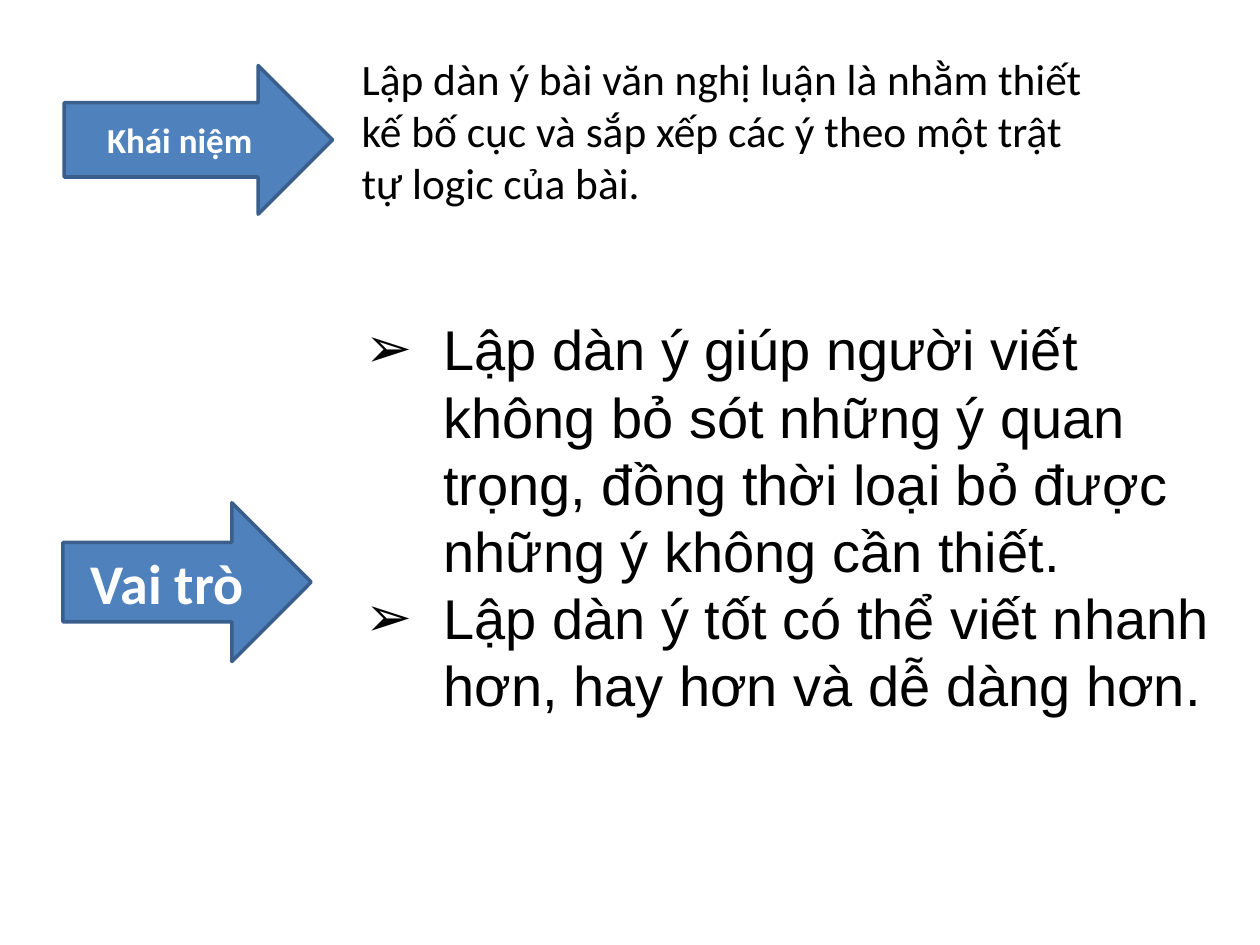
"""Build a slide on the definition and role of outlining an argumentative essay."""
import pptx
import pptx.dml.color
import pptx.enum.shapes
import pptx.enum.text
import pptx.oxml.ns
import pptx.util
from lxml import etree

Inches = pptx.util.Inches
Pt = pptx.util.Pt
RGBColor = pptx.dml.color.RGBColor
MSO_AUTO_SIZE = pptx.enum.text.MSO_AUTO_SIZE

BLACK = RGBColor(0x00, 0x00, 0x00)
WHITE = RGBColor(0xFF, 0xFF, 0xFF)
BLUE = RGBColor(0x4F, 0x81, 0xBD)
DARK_BLUE = RGBColor(0x3A, 0x5F, 0x8C)

DEFINITION = ("Lập dàn ý bài văn nghị luận là nhằm thiết kế bố cục và sắp xếp "
              "các ý theo một trật tự logic của bài.")
ROLES = [
    "Lập dàn ý giúp người viết không bỏ sót những ý quan trọng, đồng thời "
    "loại bỏ được những ý không cần thiết.",
    "Lập dàn ý tốt có thể viết nhanh hơn, hay hơn và dễ dàng hơn.",
]
DEFINITION_ARROW = ("Khái niệm", 20, (0.51, 0.52, 2.13, 1.18))
ROLES_ARROW = ("Vai trò", 32, (0.5, 3.99, 1.97, 1.26))
DEFINITION_BOX = (2.77, 0.36, 6.01, 1.5)
ROLES_BOX = (2.8, 2.45, 7.01, 3.33)
INDENT = Inches(0.62)


def set_fill(sp, color):
    sp.fill.solid()
    sp.fill.fore_color.rgb = color


def set_bullet(p, char=None, indent=0):
    qn = pptx.oxml.ns.qn
    pPr = p._p.get_or_add_pPr()
    pPr.set("marL", str(indent))
    pPr.set("indent", str(-indent))
    if char:
        etree.SubElement(pPr, qn("a:buFont")).set("typeface", "Arial")
        etree.SubElement(pPr, qn("a:buChar")).set("char", char)
    else:
        etree.SubElement(pPr, qn("a:buNone"))


def format_runs(p, name, size, color, bold=False):
    for r in p.runs:
        r.font.name = name
        r.font.size = Pt(size)
        r.font.bold = bold
        r.font.color.rgb = color


def add_definition(slide):
    sp = slide.placeholders[1]
    sp.left, sp.top, sp.width, sp.height = map(Inches, DEFINITION_BOX)
    set_fill(sp, WHITE)
    tf = sp.text_frame
    tf.text = DEFINITION
    tf.auto_size = MSO_AUTO_SIZE.NONE
    p = tf.paragraphs[0]
    set_bullet(p)
    p.space_before = Pt(0)
    format_runs(p, "Calibri", 24.8, BLACK)


def add_roles(slide):
    sp = slide.shapes.add_textbox(*map(Inches, ROLES_BOX))
    set_fill(sp, WHITE)
    tf = sp.text_frame
    tf.word_wrap = True
    tf.auto_size = MSO_AUTO_SIZE.SHAPE_TO_FIT_TEXT
    tf.text = "\n".join(ROLES)
    for p in tf.paragraphs:
        set_bullet(p, "➢", INDENT)
        format_runs(p, "Arial", 32, BLACK)


def add_arrow(slide, label, size, box):
    sp = slide.shapes.add_shape(
        pptx.enum.shapes.MSO_SHAPE.RIGHT_ARROW, *map(Inches, box))
    sp.shadow.inherit = False
    set_fill(sp, BLUE)
    sp.line.color.rgb = DARK_BLUE
    sp.line.width = Pt(2)
    tf = sp.text_frame
    tf.text = label
    tf.vertical_anchor = pptx.enum.text.MSO_ANCHOR.MIDDLE
    p = tf.paragraphs[0]
    p.alignment = pptx.enum.text.PP_ALIGN.CENTER
    format_runs(p, "Calibri", size, WHITE, bold=True)


def main():
    prs = pptx.Presentation()
    prs.slide_width, prs.slide_height = Inches(10), Inches(7.5)
    slide = prs.slides.add_slide(prs.slide_layouts[1])
    title = slide.shapes.title.element
    title.getparent().remove(title)
    add_definition(slide)
    add_arrow(slide, *DEFINITION_ARROW)
    add_roles(slide)
    add_arrow(slide, *ROLES_ARROW)
    prs.save("out.pptx")


if __name__ == "__main__":
    main()
